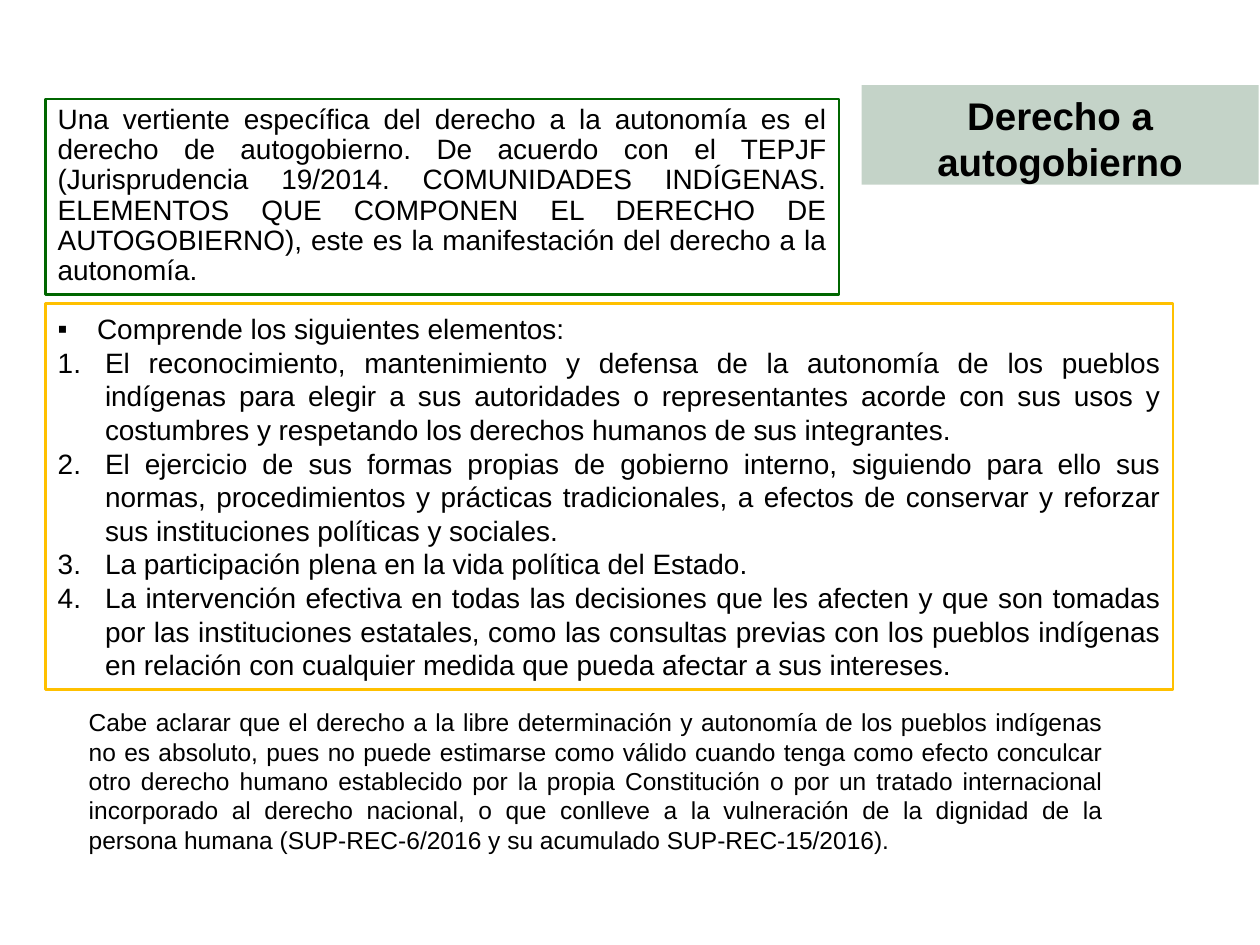
from dataclasses import dataclass
from typing import Optional

import lxml.etree
import pptx
import pptx.dml.color
import pptx.enum.shapes
import pptx.enum.text
import pptx.oxml.ns
import pptx.util

Pt = pptx.util.Pt
RGBColor = pptx.dml.color.RGBColor
ALIGN = pptx.enum.text.PP_ALIGN
ANCHOR = pptx.enum.text.MSO_ANCHOR
qn = pptx.oxml.ns.qn

BLACK = RGBColor(0x00, 0x00, 0x00)
BANNER = RGBColor(0x1E, 0x58, 0x2C)
GREEN = RGBColor(0x00, 0x66, 0x00)
AMBER = RGBColor(0xFF, 0xC0, 0x00)
FONT = "Arial"
LEFT = 25.92


@dataclass
class Para:
    text: str
    indent: float = 0
    bullet: Optional[str] = None
    numbered: bool = False
    line_spacing: float = 1.0


@dataclass
class Box:
    left: float
    top: float
    width: float
    height: float
    size: float
    paras: list[Para]
    line: Optional[RGBColor] = None
    anchor: pptx.enum.text.MSO_ANCHOR = ANCHOR.TOP


def add_bullet(p, para: Para) -> None:
    """Give the paragraph a hanging indent with a character or a number."""
    pPr = p._p.get_or_add_pPr()
    pPr.set("marL", str(Pt(para.indent)))
    pPr.set("indent", str(-Pt(para.indent)))
    lxml.etree.SubElement(pPr, qn("a:buFont"), typeface=FONT)
    if para.numbered:
        lxml.etree.SubElement(pPr, qn("a:buAutoNum"), type="arabicPeriod")
    else:
        lxml.etree.SubElement(pPr, qn("a:buChar"), char=para.bullet)


def add_run(p, text: str, size: float, bold: bool = False) -> None:
    r = p.add_run()
    r.text = text
    r.font.name = FONT
    r.font.size = Pt(size)
    r.font.bold = bold
    r.font.color.rgb = BLACK


def add_box(slide, box: Box) -> None:
    frame = [Pt(v) for v in (box.left, box.top, box.width, box.height)]
    if box.line is None:
        sp = slide.shapes.add_textbox(*frame)
    else:
        sp = slide.shapes.add_shape(
            pptx.enum.shapes.MSO_SHAPE.RECTANGLE, *frame)
        sp.shadow.inherit = False
        sp.fill.background()
        sp.line.color.rgb = box.line
        sp.line.width = Pt(1.5)
    tf = sp.text_frame
    tf.word_wrap = True
    tf.vertical_anchor = box.anchor
    for i, para in enumerate(box.paras):
        p = tf.add_paragraph() if i else tf.paragraphs[0]
        p.alignment = ALIGN.JUSTIFY
        p.line_spacing = para.line_spacing
        if para.bullet or para.numbered:
            add_bullet(p, para)
        add_run(p, para.text, box.size)


def format_title(sp, text: str) -> None:
    sp.left, sp.top, sp.width, sp.height = (
        Pt(v) for v in (492.3, 48.7, 227, 56.9))
    sp.fill.solid()
    sp.fill.fore_color.rgb = BANNER
    color = sp._element.spPr.find(qn("a:solidFill"))[0]
    lxml.etree.SubElement(color, qn("a:alpha"), val="26000")
    tf = sp.text_frame
    tf.word_wrap = True
    tf.auto_size = pptx.enum.text.MSO_AUTO_SIZE.NONE
    tf.vertical_anchor = ANCHOR.TOP
    p = tf.paragraphs[0]
    p.alignment = ALIGN.CENTER
    add_run(p, text, 22, bold=True)


ELEMENTS = [
    "El reconocimiento, mantenimiento y defensa de la autonomía de los pueblos "
    "indígenas para elegir a sus autoridades o representantes acorde con sus "
    "usos y costumbres y respetando los derechos humanos de sus integrantes.",
    "El ejercicio de sus formas propias de gobierno interno, siguiendo para "
    "ello sus normas, procedimientos y prácticas tradicionales, a efectos de "
    "conservar y reforzar sus instituciones políticas y sociales.",
    "La participación plena en la vida política del Estado.",
    "La intervención efectiva en todas las decisiones que les afecten y que "
    "son tomadas por las instituciones estatales, como las consultas previas "
    "con los pueblos indígenas en relación con cualquier medida que pueda "
    "afectar a sus intereses.",
]

BOXES = [
    # Definition
    Box(LEFT, 56.6, 453.6, 111.8, 16, [Para(
        "Una vertiente específica del derecho a la autonomía es el derecho de "
        "autogobierno. De acuerdo con el TEPJF (Jurisprudencia 19/2014. "
        "COMUNIDADES INDÍGENAS. ELEMENTOS QUE COMPONEN EL DERECHO DE "
        "AUTOGOBIERNO), este es la manifestación del derecho a la autonomía.",
        line_spacing=0.9)], GREEN),
    # Elements
    Box(LEFT, 173.6, 644.4, 220.3, 16,
        [Para("Comprende los siguientes elementos:", 22.5, bullet="▪")]
        + [Para(text, 27, numbered=True) for text in ELEMENTS],
        AMBER, ANCHOR.MIDDLE),
    # Closing remark
    Box(43.6, 400.5, 594, 92.2, 14, [Para(
        "Cabe aclarar que el derecho a la libre determinación y autonomía de "
        "los pueblos indígenas no es absoluto, pues no puede estimarse como "
        "válido cuando tenga como efecto conculcar otro derecho humano "
        "establecido por la propia Constitución o por un tratado internacional "
        "incorporado al derecho nacional, o que conlleve a la vulneración de "
        "la dignidad de la persona humana (SUP-REC-6/2016 y su acumulado "
        "SUP-REC-15/2016).")]),
]


def main() -> None:
    prs = pptx.Presentation()
    prs.slide_width, prs.slide_height = Pt(720), Pt(540)
    slide = prs.slides.add_slide(prs.slide_layouts.get_by_name("Title Only"))
    format_title(slide.shapes.title, "Derecho a autogobierno")
    for box in BOXES:
        add_box(slide, box)
    prs.save("out.pptx")


if __name__ == "__main__":
    main()
